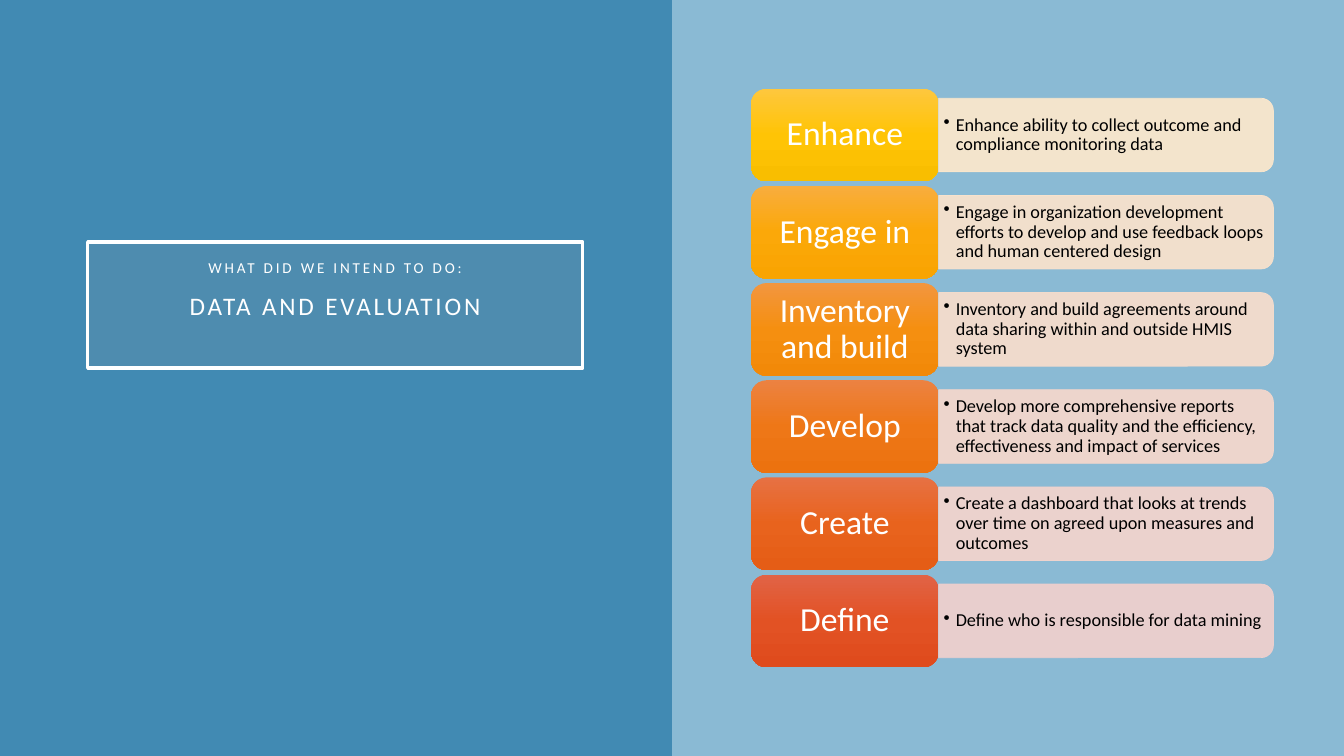
import pptx
import pptx.util
import pptx.dml.color
import pptx.enum.shapes
import pptx.enum.text
import pptx.oxml
import pptx.oxml.ns

RGB = pptx.dml.color.RGBColor
SHAPE = pptx.enum.shapes.MSO_SHAPE
ALIGN = pptx.enum.text.PP_ALIGN
MIDDLE = pptx.enum.text.MSO_ANCHOR.MIDDLE
Inches, Pt = pptx.util.Inches, pptx.util.Pt

# Content
HEADING = [("WHAT DID WE INTEND TO DO:", 10.8, 0), ("DATA AND EVALUATION", 18, 12)]  # text, size, space before
STEPS = [
    ("Enhance", "Enhance ability to collect outcome and compliance monitoring data"),
    ("Engage in", "Engage in organization development efforts to develop and use "
                  "feedback loops and human centered design"),
    ("Inventory and build", "Inventory and build agreements around data sharing within "
                            "and outside HMIS system"),
    ("Develop", "Develop more comprehensive reports that track data quality and the "
                "efficiency, effectiveness and impact of services"),
    ("Create", "Create a dashboard that looks at trends over time on agreed upon "
               "measures and outcomes"),
    ("Define", "Define who is responsible for data mining"),
]

# Colours
LIGHT_BLUE = RGB(0x8A, 0xBA, 0xD4)
BLUE = RGB(0x41, 0x8A, 0xB3)
GREY = RGB(0x9E, 0x9E, 0x9E)
WHITE = RGB(255, 255, 255)
BLACK = RGB(0, 0, 0)
BAR_COLOURS = [RGB.from_string(c) for c in
               ("FFE9CC", "FDE4CC", "FADECC", "F8D9CC", "F6D5CD", "F3D1CD")]
LABEL_GRADIENTS = [  # top, middle, bottom
    ("FEC73E", "FFC405", "F9BE00"), ("F8AD3E", "FBA809", "F9A401"),
    ("F2963F", "F58F10", "F28908"), ("EC8241", "EE7717", "EC720F"),
    ("E77143", "E8631D", "E55D16"), ("E16346", "E25224", "DF4B1D"),
]

# Grid, in inches
SLIDE_W, SLIDE_H = 13.33, 7.5
LEFT, TOP, PITCH = 7.45, 0.88, 0.964
LABEL_W, LABEL_H = 1.86, 0.92
BAR_W, BAR_H, TEXT_H = 3.32, 0.73, 0.66
BAR_LEFT = LEFT + LABEL_W


def box(x, y, w, h):
    return [Inches(v) for v in (x, y, w, h)]


def add_alpha(fill, percent):
    clr = fill._xPr.find(".//" + pptx.oxml.ns.qn("a:srgbClr"))
    clr.append(pptx.oxml.parse_xml(
        f'<a:alpha {pptx.oxml.ns.nsdecls("a")} val="{percent * 1000}"/>'))


def add_shape(kind, place, fill=None, alpha=100, line=None, width=0):
    sp = s.shapes.add_shape(kind, *box(*place))
    sp.shadow.inherit = False
    if fill is not None:
        sp.fill.solid()
        sp.fill.fore_color.rgb = fill
        add_alpha(sp.fill, alpha)
    if line is None:
        sp.line.fill.background()
    else:
        sp.line.color.rgb = line
        sp.line.width = Pt(width)
    return sp


def set_frame(tf, **margins):
    tf.word_wrap, tf.vertical_anchor = True, MIDDLE
    for side, value in margins.items():
        setattr(tf, "margin_" + side, Inches(value))


def write(p, text, size, colour, align):
    p.alignment, p.line_spacing = align, 0.9
    r = p.add_run()
    r.text = text
    for name, value in {"name": "Calibri", "size": Pt(size)}.items():
        setattr(r.font, name, value)
    r.font.color.rgb = colour
    return r


def set_gradient(sp, colours):
    stops = "".join(f'<a:gs pos="{i * 50000}"><a:srgbClr val="{c}"/></a:gs>'
                    for i, c in enumerate(colours))
    sp.fill.background()
    old = sp._element.spPr.find(pptx.oxml.ns.qn("a:noFill"))
    old.getparent().replace(old, pptx.oxml.parse_xml(
        f'<a:gradFill {pptx.oxml.ns.nsdecls("a")} rotWithShape="1"><a:gsLst>{stops}</a:gsLst>'
        '<a:lin ang="5400000" scaled="0"/></a:gradFill>'))


def add_bullet(p, indent):
    pPr = p._p.get_or_add_pPr()
    pPr.set("marL", str(Inches(indent)))
    pPr.set("indent", str(-Inches(indent)))
    pPr.append(pptx.oxml.parse_xml(
        f'<a:buChar {pptx.oxml.ns.nsdecls("a")} char="•"/>'))


prs = pptx.Presentation()
prs.slide_width, prs.slide_height = Inches(SLIDE_W), Inches(SLIDE_H)
s = prs.slides.add_slide(prs.slide_layouts[6])

# Background and left half
s.background.fill.solid()
s.background.fill.fore_color.rgb = LIGHT_BLUE
add_shape(SHAPE.RECTANGLE, (0, 0, SLIDE_W / 2, SLIDE_H), BLUE)

# Framed title
frame = add_shape(SHAPE.RECTANGLE, (0.87, 2.4, 4.91, 1.25), GREY, 15, WHITE, 2.5)
tf = frame.text_frame
set_frame(tf, left=0.2, right=0.2, top=0.2, bottom=0.48)
for i, (text, size, before) in enumerate(HEADING):
    p = tf.add_paragraph() if i else tf.paragraphs[0]
    p.space_before = Pt(before)
    r = write(p, text, size, WHITE, ALIGN.CENTER)
    r.font._element.set("spc", "200")

# Steps: a bar with its text, then the label
for i, ((label, detail), colour, gradient) in enumerate(
        zip(STEPS, BAR_COLOURS, LABEL_GRADIENTS)):
    top = TOP + i * PITCH
    middle = top + LABEL_H / 2

    bar = add_shape(SHAPE.ROUND_2_SAME_RECTANGLE,
                    (BAR_LEFT + (BAR_W - BAR_H) / 2, middle - BAR_W / 2, BAR_H, BAR_W),
                    colour, 90, colour, 0.5)
    bar.rotation = 90
    add_alpha(bar.line.fill, 90)

    tb = s.shapes.add_textbox(*box(BAR_LEFT, middle - TEXT_H / 2, BAR_W - 0.04, TEXT_H))
    set_frame(tb.text_frame, left=0.05, right=0.05, top=0.03, bottom=0.03)
    p = tb.text_frame.paragraphs[0]
    write(p, detail, 13, BLACK, ALIGN.LEFT)
    add_bullet(p, 0.12)

    sp = add_shape(SHAPE.ROUNDED_RECTANGLE, (LEFT, top, LABEL_W, LABEL_H))
    set_gradient(sp, gradient)
    set_frame(sp.text_frame)
    write(sp.text_frame.paragraphs[0], label, 24, WHITE, ALIGN.CENTER)

prs.save("out.pptx")
